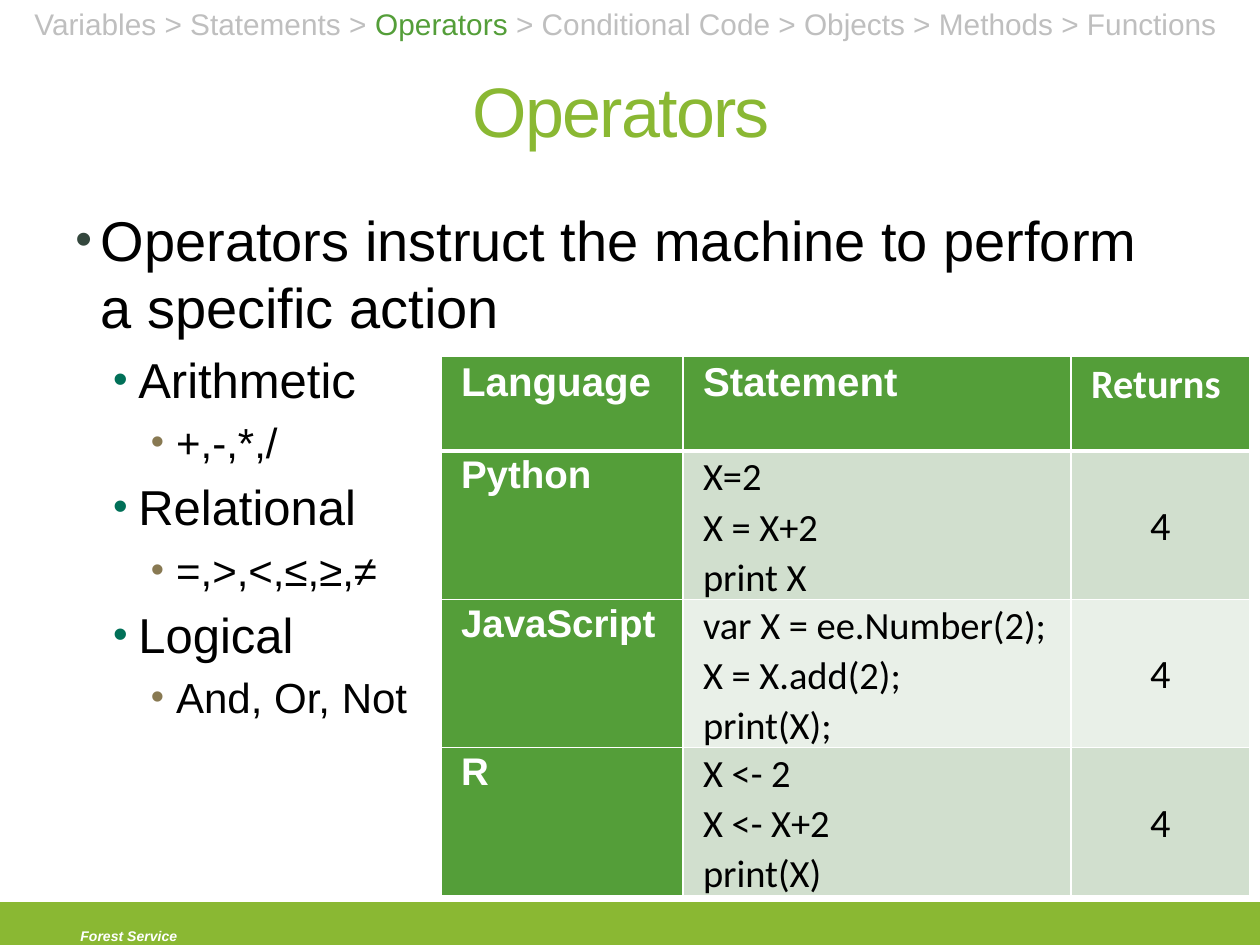
from lxml.etree import SubElement
from pptx import Presentation
from pptx.dml.color import RGBColor
from pptx.enum.shapes import MSO_SHAPE
from pptx.enum.text import MSO_ANCHOR, PP_ALIGN
from pptx.oxml.ns import qn
from pptx.util import Inches, Pt

WHITE, BLACK, GRAY = "FFFFFF", "000000", "BFBFBF"
GREEN, LIME = "549E39", "8AB833"
BANDS = ["D1DFCE", "E9F0E8"]

TOPICS = ["Variables", "Statements", "Operators", "Conditional Code",
          "Objects", "Methods", "Functions"]
CURRENT = "Operators"
BULLETS = [
    (0, "Operators instruct the machine to perform a specific action"),
    (1, "Arithmetic"),
    (2, "+,-,*,/"),
    (1, "Relational"),
    (2, "=,>,<,≤,≥,≠"),
    (1, "Logical"),
    (2, "And, Or, Not"),
]
LEVELS = [
    {"size": 32, "indent": 0.2, "color": "34473D", "scale": 85},
    {"size": 28, "indent": 0.5, "color": "017058", "scale": 85},
    {"size": 24, "indent": 0.8, "color": "887952", "scale": 90},
]
HEADERS = [("Language", "Arial"), ("Statement", "Arial"), ("Returns", "Calibri")]
EXAMPLES = [
    ("Python", ["X=2", "X = X+2", "print X"], "4"),
    ("JavaScript", ["var X = ee.Number(2);", "X = X.add(2);", "print(X);"], "4"),
    ("R", ["X <- 2", "X <- X+2", "print(X)"], "4"),
]
COLUMN_WIDTHS = [1.92, 3.08, 1.42]
ROW_HEIGHTS = [0.75] + [1.17] * len(EXAMPLES)


def rgb(color):
    return RGBColor.from_string(color)


def add_run(paragraph, text, size=18, color=BLACK, font="Arial",
            bold=False, italic=False, spacing=None):
    run = paragraph.add_run()
    run.text = text
    run.font.size = Pt(size)
    run.font.name = font
    run.font.bold = bold
    run.font.italic = italic
    run.font.color.rgb = rgb(color)
    if spacing is not None:
        run.font._element.set("spc", str(spacing * 100))


def add_text_frame(slide, left, top, width, height, anchor=MSO_ANCHOR.TOP):
    box = slide.shapes.add_textbox(*map(Inches, (left, top, width, height)))
    frame = box.text_frame
    frame.word_wrap = True
    frame.vertical_anchor = anchor
    return frame


def next_paragraph(frame, index):
    return frame.add_paragraph() if index else frame.paragraphs[0]


def set_bullet(paragraph, indent, color, scale):
    properties = paragraph._p.get_or_add_pPr()
    properties.set("marL", str(Inches(indent)))
    properties.set("indent", str(Inches(-0.2)))
    bullet_color = SubElement(properties, qn("a:buClr"))
    SubElement(bullet_color, qn("a:srgbClr"), val=color)
    SubElement(properties, qn("a:buSzPct"), val=str(scale * 1000))
    SubElement(properties, qn("a:buFont"), typeface="Arial")
    SubElement(properties, qn("a:buChar"), char="•")


def set_borders(cell, **widths):
    properties = cell._tc.get_or_add_tcPr()
    for side in "LRTB":
        line = SubElement(properties, qn(f"a:ln{side}"), w=str(Pt(widths.get(side, 1))))
        fill = SubElement(line, qn("a:solidFill"))
        SubElement(fill, qn("a:srgbClr"), val=WHITE)


def fill_cell(cell, lines, fill, align=PP_ALIGN.LEFT, anchor=MSO_ANCHOR.TOP,
              borders=None, **text_format):
    set_borders(cell, **(borders or {}))
    cell.fill.solid()
    cell.fill.fore_color.rgb = rgb(fill)
    cell.margin_left = cell.margin_right = Inches(0.16)
    cell.margin_top = cell.margin_bottom = 0
    cell.vertical_anchor = anchor
    for index, line in enumerate(lines):
        paragraph = next_paragraph(cell.text_frame, index)
        paragraph.alignment = align
        paragraph.line_spacing = 1.07
        add_run(paragraph, line, **text_format)


def add_footer(slide):
    bar = slide.shapes.add_shape(MSO_SHAPE.RECTANGLE, 0, Inches(7.17), Inches(10), Inches(0.36))
    bar.shadow.inherit = False
    bar.fill.solid()
    bar.fill.fore_color.rgb = rgb(LIME)
    bar.line.color.rgb = rgb(LIME)
    bar.line.width = Pt(2.08)
    frame = add_text_frame(slide, 0.54, 7.31, 2.04, 0.24)
    add_run(frame.paragraphs[0], "Forest Service", size=8, color=WHITE, bold=True, italic=True)


def add_title(slide):
    frame = add_text_frame(slide, 0.5, 0.33, 9, 1.08, anchor=MSO_ANCHOR.MIDDLE)
    frame.paragraphs[0].alignment = PP_ALIGN.CENTER
    add_run(frame.paragraphs[0], "Operators ", size=40, color=LIME, spacing=-1)


def add_bullets(slide):
    frame = add_text_frame(slide, 0.5, 1.58, 9, 5.5)
    for index, (level, text) in enumerate(BULLETS):
        style = LEVELS[level]
        paragraph = next_paragraph(frame, index)
        paragraph.level = level
        if index:
            paragraph.space_before = Pt(style["size"] * 0.2)
        set_bullet(paragraph, style["indent"], style["color"], style["scale"])
        add_run(paragraph, text, size=style["size"])


def add_breadcrumb(slide):
    paragraph = add_text_frame(slide, 0, 0, 10, 0.39).paragraphs[0]
    paragraph.alignment = PP_ALIGN.CENTER
    position = TOPICS.index(CURRENT)
    before = "".join(f"{topic} > " for topic in TOPICS[:position])
    after = "".join(f" > {topic}" for topic in TOPICS[position + 1:]) + " "
    for text, color in [(before, GRAY), (CURRENT, GREEN), (after, GRAY)]:
        add_run(paragraph, text, size=17, color=color)


def add_examples(slide):
    table = slide.shapes.add_table(
        len(ROW_HEIGHTS), len(COLUMN_WIDTHS), Inches(3.5), Inches(2.83),
        Inches(sum(COLUMN_WIDTHS)), Inches(sum(ROW_HEIGHTS))).table
    for column, width in zip(table.columns, COLUMN_WIDTHS):
        column.width = Inches(width)
    for row, height in zip(table.rows, ROW_HEIGHTS):
        row.height = Inches(height)
    for column, (text, font) in enumerate(HEADERS):
        fill_cell(table.cell(0, column), [text], GREEN, borders={"B": 3},
                  size=23, color=WHITE, font=font, bold=True)
    for row, (language, code, result) in enumerate(EXAMPLES, start=1):
        band = BANDS[(row - 1) % 2]
        borders = {"T": 3} if row == 1 else None
        fill_cell(table.cell(row, 0), [language], GREEN, borders=borders,
                  size=22, color=WHITE, bold=True)
        fill_cell(table.cell(row, 1), code, band, borders=borders,
                  size=22, font="Calibri")
        fill_cell(table.cell(row, 2), [result], band, PP_ALIGN.CENTER,
                  MSO_ANCHOR.MIDDLE, borders, size=23, font="Calibri")


def main():
    presentation = Presentation()
    presentation.slide_width = Inches(10)
    presentation.slide_height = Inches(7.5)
    slide = presentation.slides.add_slide(presentation.slide_layouts[6])
    add_footer(slide)
    add_title(slide)
    add_bullets(slide)
    add_breadcrumb(slide)
    add_examples(slide)
    presentation.save("out.pptx")


if __name__ == "__main__":
    main()
